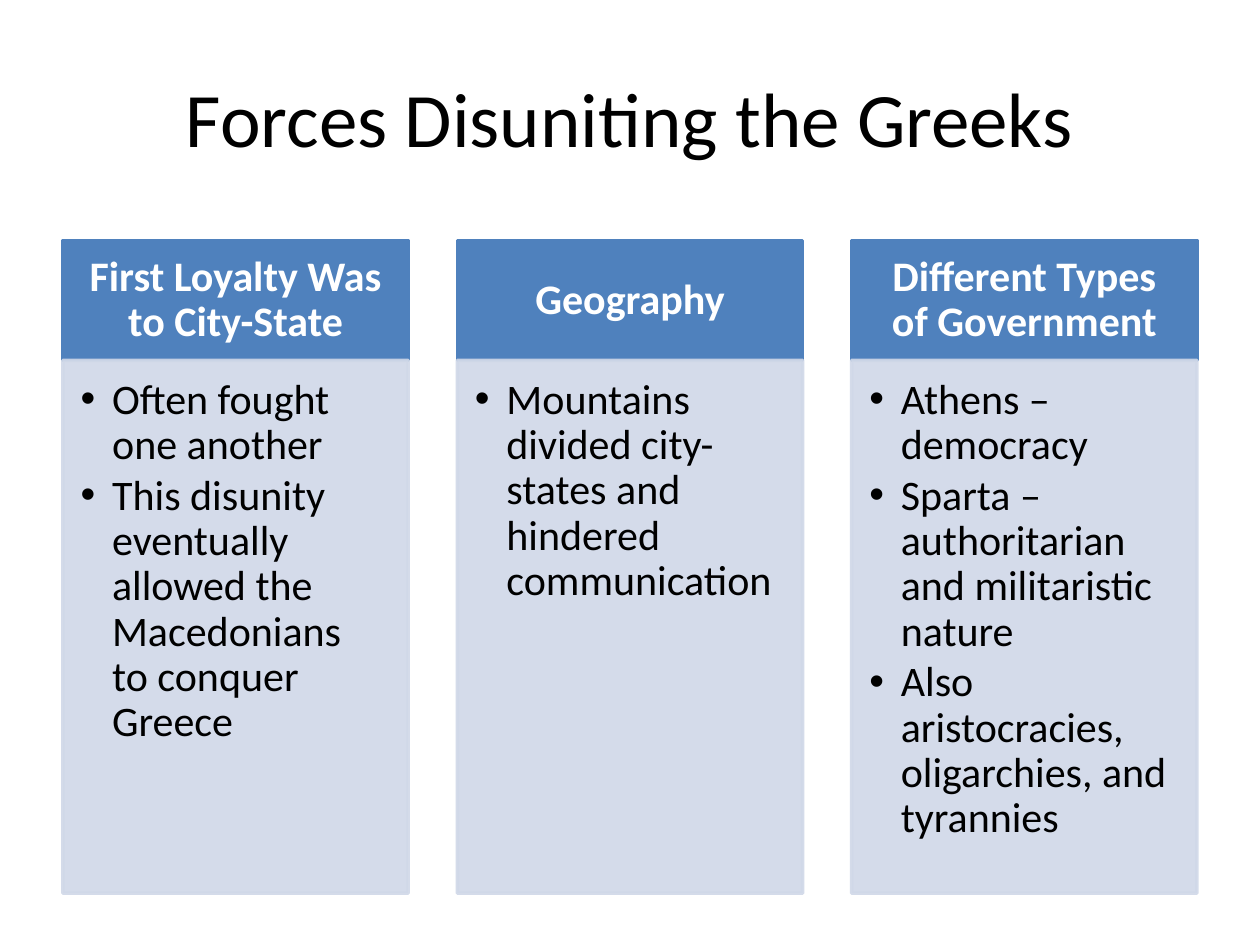
from lxml import etree
from pptx import Presentation
from pptx.dml.color import RGBColor
from pptx.enum.shapes import MSO_SHAPE
from pptx.enum.text import MSO_ANCHOR, PP_ALIGN
from pptx.oxml.ns import qn
from pptx.util import Inches, Pt

RECTANGLE = MSO_SHAPE.RECTANGLE
TOP, MIDDLE = MSO_ANCHOR.TOP, MSO_ANCHOR.MIDDLE
LEFT, CENTER = PP_ALIGN.LEFT, PP_ALIGN.CENTER

TITLE = "Forces Disuniting the Greeks"
FORCES = [
    ("First Loyalty Was to City-State", [
        "Often fought one another",
        "This disunity eventually allowed the Macedonians to conquer Greece",
    ]),
    ("Geography", [
        "Mountains divided city-states and hindered communication",
    ]),
    ("Different Types of Government", [
        "Athens – democracy",
        "Sparta – authoritarian and militaristic nature",
        "Also aristocracies, oligarchies, and tyrannies",
    ]),
]

COLORS = {"header": "4F81BD", "body": "D0D8E8", "white": "FFFFFF", "black": "000000"}
FONT = "Calibri"
MARGIN, CONTENT_WIDTH = 0.5, 9
COLUMN_WIDTH = 2.74
COLUMN_STEP = (CONTENT_WIDTH - COLUMN_WIDTH) / (len(FORCES) - 1)
HEADER_TOP, HEADER_HEIGHT, BODY_HEIGHT = 1.91, 0.95, 4.23
BODY_OPACITY = 90
BULLET_INDENT = 0.25


def rgb(name):
    return RGBColor.from_string(COLORS[name])


def style_font(paragraph, size, color, bold=False):
    font = paragraph.font
    font.name, font.size, font.bold = FONT, Pt(size), bold
    font.color.rgb = rgb(color)


def set_opacity(shape, percent):
    """Make both the fill and the outline partly transparent."""
    for color in shape._element.spPr.iter(qn("a:srgbClr")):
        etree.SubElement(color, qn("a:alpha"), val=str(percent * 1000))


def add_bullet(paragraph):
    properties = paragraph._p.get_or_add_pPr()
    properties.set("marL", str(Inches(BULLET_INDENT)))
    properties.set("indent", str(Inches(-BULLET_INDENT)))
    etree.SubElement(properties, qn("a:buFont"), typeface="Arial")
    etree.SubElement(properties, qn("a:buChar"), char="•")


def add_panel(slide, box, color, lines, text_color, insets, anchor, align, bold=False):
    panel = slide.shapes.add_shape(RECTANGLE, *map(Inches, box))
    panel.shadow.inherit = False
    panel.fill.solid()
    panel.fill.fore_color.rgb = rgb(color)
    panel.line.color.rgb = rgb(color)
    panel.line.width = Pt(2)

    frame = panel.text_frame
    frame.word_wrap = True
    frame.vertical_anchor = anchor
    (frame.margin_left, frame.margin_top,
     frame.margin_right, frame.margin_bottom) = map(Inches, insets)
    frame.text = "\n".join(lines)
    for paragraph in frame.paragraphs:
        paragraph.alignment = align
        paragraph.line_spacing = 0.9
        paragraph.space_after = Pt(3)
        style_font(paragraph, 24, text_color, bold)
    return panel


def add_column(slide, left, heading, points):
    add_panel(slide, (left, HEADER_TOP, COLUMN_WIDTH, HEADER_HEIGHT), "header",
              [heading], "white", (0.19, 0.11, 0.19, 0.11), MIDDLE, CENTER, bold=True)
    body = add_panel(slide, (left, HEADER_TOP + HEADER_HEIGHT, COLUMN_WIDTH, BODY_HEIGHT),
                     "body", points, "black", (0.14, 0.14, 0.19, 0.21), TOP, LEFT)
    set_opacity(body, BODY_OPACITY)
    for paragraph in body.text_frame.paragraphs:
        add_bullet(paragraph)


def main():
    deck = Presentation()
    deck.slide_width, deck.slide_height = Inches(10), Inches(7.5)
    slide = deck.slides.add_slide(deck.slide_layouts[5])

    title = slide.shapes.title
    title.left, title.top = Inches(MARGIN), Inches(0.3)
    title.width, title.height = Inches(CONTENT_WIDTH), Inches(1.25)
    title.text_frame.text = TITLE
    title.text_frame.vertical_anchor = MIDDLE
    title.text_frame.paragraphs[0].alignment = CENTER
    style_font(title.text_frame.paragraphs[0], 44, "black")

    for index, (heading, points) in enumerate(FORCES):
        add_column(slide, MARGIN + index * COLUMN_STEP, heading, points)

    deck.save("out.pptx")


if __name__ == "__main__":
    main()
